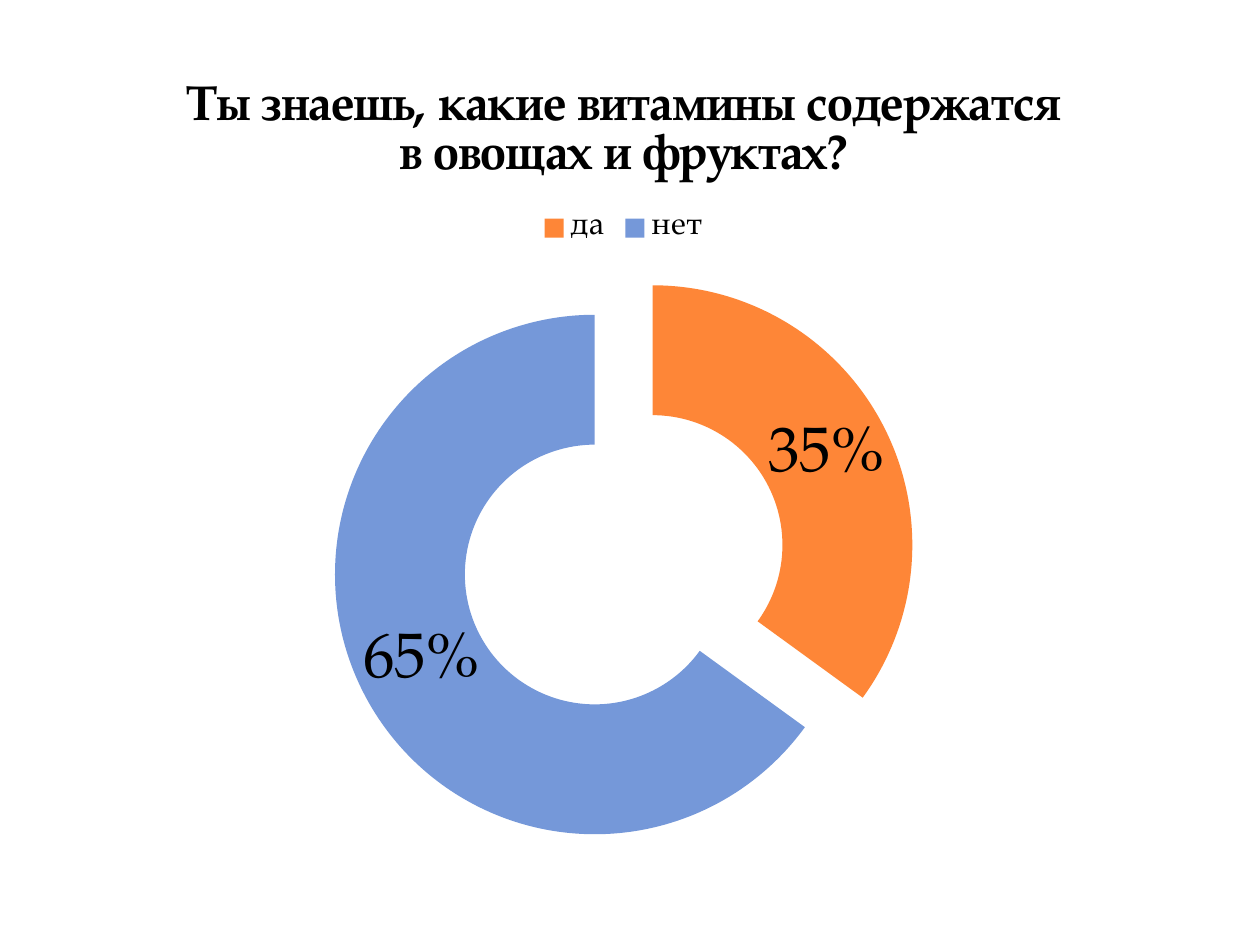
from lxml import etree
from pptx import Presentation
from pptx.chart.data import CategoryChartData as ChartData
from pptx.dml.color import RGBColor
from pptx.enum.chart import XL_CHART_TYPE as ChartType, XL_LEGEND_POSITION as LegendPos
from pptx.oxml.ns import qn
from pptx.util import Inches, Pt


def rgb(value):
    return RGBColor.from_string(value)


class SurveySlide:
    FONT = "TeX Gyre Pagella"
    INK = "000000"

    def __init__(self, prs):
        self.width, self.height = prs.slide_width, prs.slide_height
        self.s = prs.slides.add_slide(prs.slide_layouts[6])

    def style(self, font, size, bold=False):
        font.name, font.size, font.bold = self.FONT, Pt(size), bold
        font.color.rgb = rgb(self.INK)

    def doughnut(self, box, question, answers, explosion):
        """Place a doughnut; box holds shares of the slide's size."""
        data = ChartData()
        data.categories = [name for name, _, _ in answers]
        data.add_series("Series 1", [value for _, value, _ in answers])
        x, y, w, h = box
        chart = self.s.shapes.add_chart(
            ChartType.DOUGHNUT,
            int(x * self.width), int(y * self.height),
            int(w * self.width), int(h * self.height), data).chart
        self.style(chart.font, 18)

        # Title
        chart.has_title = True
        tf = chart.chart_title.text_frame
        tf.text = question
        self.style(tf.paragraphs[0].runs[0].font, 28, bold=True)
        chart.chart_title.include_in_layout = False

        # Legend
        chart.has_legend = True
        chart.legend.position = LegendPos.TOP
        chart.legend.include_in_layout = False
        self.style(chart.legend.font, 18)

        # Slices, pulled apart
        plot = chart.plots[0]
        plot.vary_by_categories = True
        series = plot.series[0]
        for i, (_, _, color) in enumerate(answers):
            fill = series.points[i].format.fill
            fill.solid()
            fill.fore_color.rgb = rgb(color)
        explode = etree.Element(qn("c:explosion"), val=str(explosion))
        series._element.find(qn("c:dPt")).addprevious(explode)

        # Percent labels
        plot.has_data_labels = True
        labels = plot.data_labels
        labels.show_value = False
        labels.show_percentage = True
        labels.number_format = "0%"
        labels.number_format_is_linked = False
        self.style(labels.font, 36)


def main():
    prs = Presentation()
    prs.slide_width, prs.slide_height = Inches(10), Inches(7.5)
    slide = SurveySlide(prs)
    slide.doughnut(
        box=(0.04, 0.05, 0.91, 0.87),
        question="Ты знаешь, какие витамины содержатся в овощах и фруктах?",
        answers=[("да", 35, "FE8637"), ("нет", 65, "7598D9")],
        explosion=25)
    prs.save("out.pptx")


if __name__ == "__main__":
    main()
